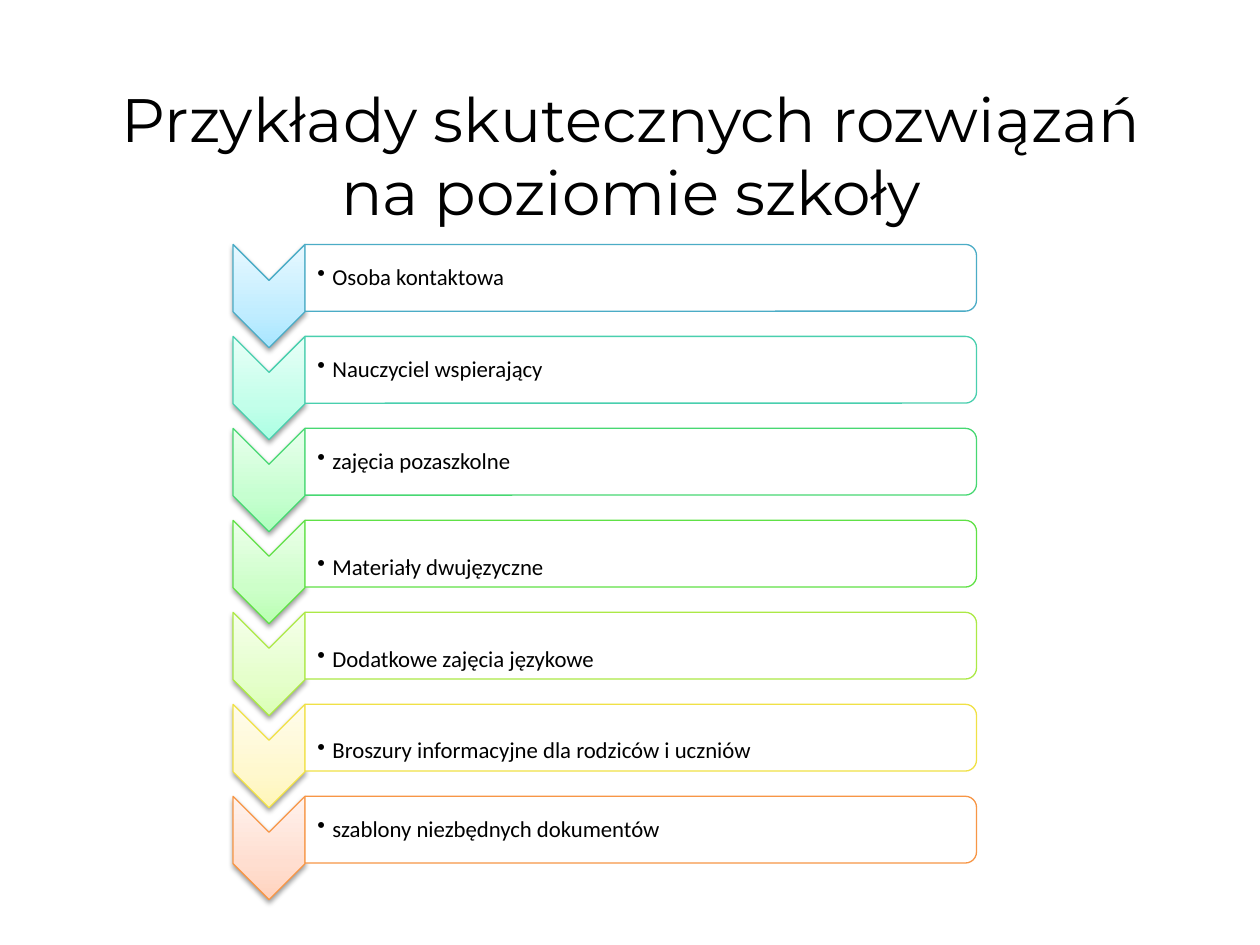
from pptx import Presentation, util as u
from pptx.dml.color import RGBColor
from pptx.enum import shapes, text
from pptx.oxml import parse_xml
from pptx.oxml.ns import nsdecls, qn

TITLE = "Przykłady skutecznych rozwiązań na poziomie szkoły"
# text, outline, gradient colours from bottom to top, text set low in its frame
STEPS = [
    ("Osoba kontaktowa", "4BACC6", ("A7E6FF", "C1EDFF", "E7F8FF"), False),
    ("Nauczyciel wspierający", "49CFAE", ("ABFFE3", "C3FFEA", "E8FFF7"), False),
    ("zajęcia pozaszkolne", "47D872", ("AFFFBD", "C6FFD0", "E9FFED"), False),
    ("Materiały dwujęzyczne", "60E146", ("B9FFB2", "CDFFC9", "ECFFEA"), True),
    ("Dodatkowe zajęcia językowe", "ACE946", ("DBFFB6", "E5FFCB", "F5FFEB"), True),
    ("Broszury informacyjne dla rodziców i uczniów", "F0E146",
     ("FFF6B9", "FFF8CE", "FFFCEC"), True),
    ("szablony niezbędnych dokumentów", "F79646", ("FFD2BD", "FFDED0", "FFF2ED"), False),
]
THEME = {
    "text": "000000", "frame": "FFFFFF", "line": 0.75,
    "title": ("Montserrat", 35), "body": ("Calibri", 13),
    "stops": (0, 35, 100),
}
FIRST_TOP, PITCH = 1.94, 0.73
CHEVRON_LEFT, CHEVRON_WIDTH, CHEVRON_HEIGHT = 1.85, 0.57, 0.82
FRAME_LEFT, FRAME_WIDTH, FRAME_HEIGHT = 2.42, 5.33, 0.53
TEXT_WIDTH, TEXT_HEIGHT = 5.31, 0.48
INDENT, LOW_OFFSET = 0.12, 0.22


def set_all(target, values):
    for name, value in values.items():
        setattr(target, name, value)


def add_turned_shape(slide, kind, left, top, width, height, outline):
    """Add a shape turned 90 degrees that shows in the given upright box."""
    shape = slide.shapes.add_shape(
        kind,
        u.Inches(left + (width - height) / 2), u.Inches(top + (height - width) / 2),
        u.Inches(height), u.Inches(width))
    shape.rotation = 90
    shape.line.color.rgb = RGBColor.from_string(outline)
    shape.line.width = u.Pt(THEME["line"])
    shape.shadow.inherit = False
    return shape


def fill_gradient(shape, colours):
    shape.fill.gradient()
    shape.fill.gradient_angle = 90
    gradient = shape._element.spPr.find(qn("a:gradFill"))
    gradient.set("rotWithShape", "0")
    stops = gradient.find(qn("a:gsLst"))
    for stop in list(stops):
        stops.remove(stop)
    for position, colour in zip(THEME["stops"], colours):
        stops.append(parse_xml(
            f'<a:gs {nsdecls("a")} pos="{position * 1000}"><a:srgbClr val="{colour}"/></a:gs>'))


def add_shadow(shape):
    shape._element.spPr.find(qn("a:effectLst")).append(parse_xml(
        f'<a:outerShdw {nsdecls("a")} blurRad="{u.Pt(3.1)}" dist="{u.Pt(1.6)}" '
        f'dir="5400000" rotWithShape="0"><a:srgbClr val="000000">'
        f'<a:alpha val="38000"/></a:srgbClr></a:outerShdw>'))


def add_text(slide, box, content, style, margins, alignment, bullet=False):
    frame = slide.shapes.add_textbox(*map(u.Inches, box)).text_frame
    sides = ("margin_left", "margin_top", "margin_right", "margin_bottom")
    set_all(frame, {
        "word_wrap": True, "vertical_anchor": text.MSO_ANCHOR.MIDDLE,
        **dict(zip(sides, map(u.Inches, margins)))})
    paragraph = frame.paragraphs[0]
    paragraph.text = content
    if bullet:
        properties = paragraph._p.get_or_add_pPr()
        properties.set("marL", str(u.Inches(INDENT)))
        properties.set("indent", str(-u.Inches(INDENT)))
        properties.append(parse_xml(f'<a:buChar {nsdecls("a")} char="•"/>'))
        set_all(paragraph, {"line_spacing": 0.9, "space_after": u.Pt(2)})
    paragraph.alignment = alignment
    font = paragraph.runs[0].font
    set_all(font, {"name": style[0], "size": u.Pt(style[1])})
    font.color.rgb = RGBColor.from_string(THEME["text"])


def add_step(slide, top, label, outline, colours, low):
    chevron = add_turned_shape(
        slide, shapes.MSO_SHAPE.CHEVRON, CHEVRON_LEFT, top,
        CHEVRON_WIDTH, CHEVRON_HEIGHT, outline)
    fill_gradient(chevron, colours)
    add_shadow(chevron)
    frame = add_turned_shape(
        slide, shapes.MSO_SHAPE.ROUND_2_SAME_RECTANGLE, FRAME_LEFT, top,
        FRAME_WIDTH, FRAME_HEIGHT, outline)
    frame.fill.solid()
    frame.fill.fore_color.rgb = RGBColor.from_string(THEME["frame"])
    text_top = top + (FRAME_HEIGHT - TEXT_HEIGHT) / 2
    margins = (0.1, 0.01 + LOW_OFFSET * low, 0.01, 0.01)
    add_text(slide, (FRAME_LEFT, text_top, TEXT_WIDTH, TEXT_HEIGHT), label,
             THEME["body"], margins, text.PP_ALIGN.LEFT, bullet=True)


def main():
    presentation = Presentation()
    set_all(presentation, {"slide_width": u.Inches(10), "slide_height": u.Inches(7.5)})
    slide = presentation.slides.add_slide(presentation.slide_layouts[6])
    add_text(slide, (0.51, 0.6, 9, 1.25), TITLE, THEME["title"],
             (0.2, 0.05, 0.2, 0.05), text.PP_ALIGN.CENTER)
    for index, step in enumerate(STEPS):
        add_step(slide, FIRST_TOP + index * PITCH, *step)
    presentation.save("out.pptx")


if __name__ == "__main__":
    main()
